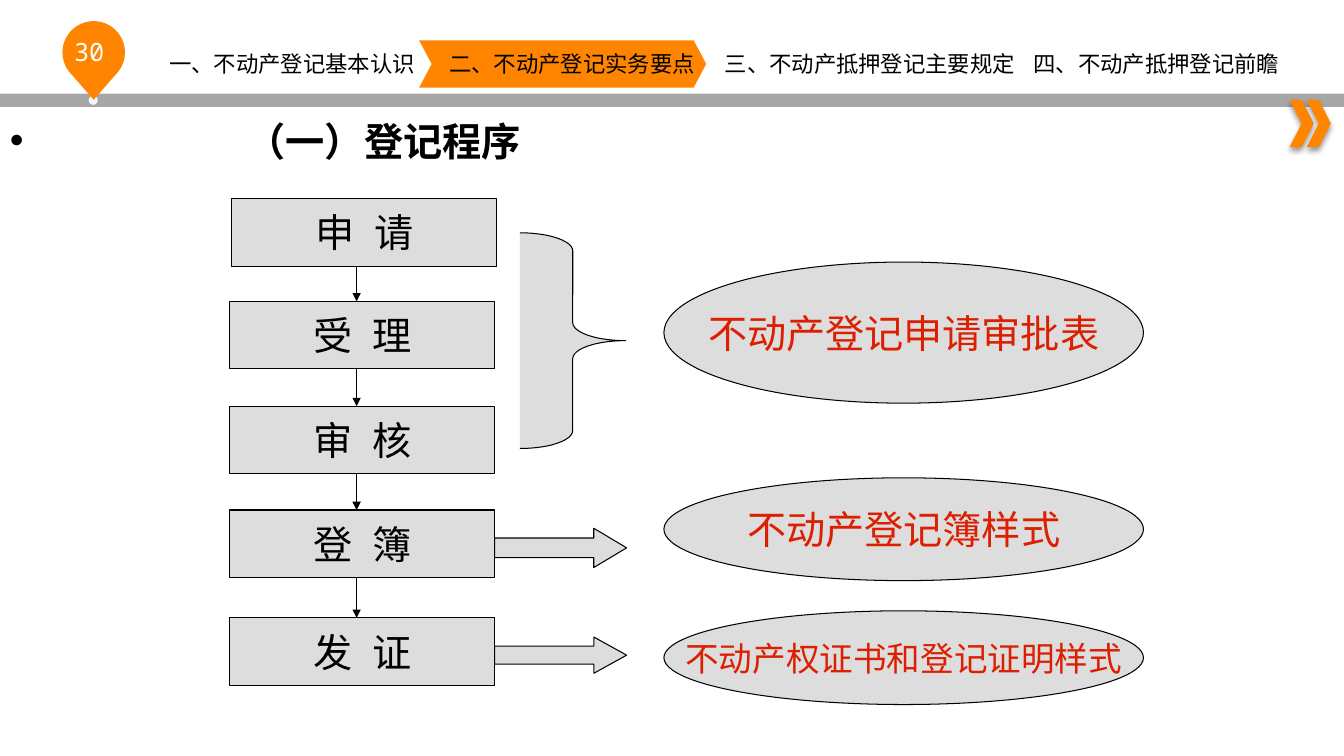
import math
from dataclasses import dataclass

from lxml import etree
from pptx import Presentation
from pptx.dml.color import RGBColor
from pptx.enum.shapes import MSO_CONNECTOR, MSO_SHAPE
from pptx.enum.text import MSO_ANCHOR, PP_ALIGN
from pptx.oxml.ns import qn
from pptx.util import Pt

PX = 9144  # EMU per px, 100 px to the inch
RECT, OVAL = MSO_SHAPE.RECTANGLE, MSO_SHAPE.OVAL
CHEVRON, ARROW = MSO_SHAPE.CHEVRON, MSO_SHAPE.RIGHT_ARROW
BRACE = MSO_SHAPE.RIGHT_BRACE
STRAIGHT = MSO_CONNECTOR.STRAIGHT
LEFT, CENTER = PP_ALIGN.LEFT, PP_ALIGN.CENTER
TOP, MIDDLE = MSO_ANCHOR.TOP, MSO_ANCHOR.MIDDLE


@dataclass(frozen=True)
class Theme:
    orange: str = "FF8500"
    bar: str = "A6A6A6"
    dot: str = "F6F6F6"
    panel: str = "DDDDDD"
    ink: str = "000000"
    white: str = "FFFFFF"
    red: str = "DC1F00"
    chinese: str = "Noto Sans CJK SC"
    mono: str = "Noto Sans Mono"
    nav_font: str = "Calibri"
    box_font: str = "Arial"
    nav_size: int = 16
    number_size: int = 18
    small_size: int = 24
    large_size: int = 28


THEME = Theme()

NAV_ITEMS = [
    ("一、不动产登记基本认识", 159, 262, CENTER, THEME.nav_font),
    ("二、不动产登记实务要点", 446, 255, LEFT, THEME.chinese),
    ("三、不动产抵押登记主要规定", 701, 325, CENTER, THEME.nav_font),
    ("四、不动产抵押登记前瞻", 1026, 259, LEFT, THEME.chinese),
]
STEP_WIDTH, STEP_HEIGHT = 263, 67
STEPS = [("申 请", 230, 197), ("受 理", 228, 299), ("审 核", 228, 403),
         ("登 簿", 228, 506), ("发 证", 228, 613)]
FORMS = [
    ("不动产登记申请审批表", 260, 140, THEME.large_size),
    ("不动产登记簿样式", 474, 102, THEME.large_size),
    ("不动产权证书和登记证明样式", 606, 93, THEME.small_size),
]
OUTPUT_ARROWS = [(524, 39, 0.836), (632, 36, 0.904)]


def emu(*lengths):
    return [length * PX for length in lengths]


def paint(shape, fill, line=None):
    shape.shadow.inherit = False
    shape.fill.solid()
    shape.fill.fore_color.rgb = RGBColor.from_string(fill)
    if line:
        shape.line.color.rgb = RGBColor.from_string(line)
        shape.line.width = Pt(0.75)
    else:
        shape.line.fill.background()


def add_preset(slide, kind, at, fill, line=None, adjust=()):
    shape = slide.shapes.add_shape(kind, *emu(*at))
    paint(shape, fill, line)
    for index, value in enumerate(adjust):
        shape.adjustments[index] = value
    return shape


def write(box, text, size, color, font, align=CENTER, anchor=MIDDLE,
          wrap=False, inset=None, bold=False, spacing=0):
    """Put one formatted line in box; spacing is letter spacing in points."""
    frame = box.text_frame
    layout = {"word_wrap": wrap, "vertical_anchor": anchor}
    if inset is not None:
        for side in ("left", "top", "right", "bottom"):
            layout["margin_" + side] = inset * PX
    for name, value in layout.items():
        setattr(frame, name, value)
    para = frame.paragraphs[0]
    para.alignment = align
    span = para.add_run()
    span.text = text
    for name, value in {"size": Pt(size), "name": font, "bold": bold}.items():
        setattr(span.font, name, value)
    span.font.color.rgb = RGBColor.from_string(color)
    properties = span.font._element
    etree.SubElement(properties, qn("a:ea"), typeface=THEME.chinese)
    if spacing:
        properties.set("spc", str(spacing * 100))
    return para


def add_text(slide, at, *args, **options):
    return write(slide.shapes.add_textbox(*emu(*at)), *args, **options)


def add_drop_shadow(shape):
    effects = shape._element.spPr.find(qn("a:effectLst"))
    shadow = etree.SubElement(effects, qn("a:outerShdw"), blurRad=str(Pt(4)),
                              dist=str(Pt(3)), dir="5400000", rotWithShape="0")
    color = etree.SubElement(shadow, qn("a:srgbClr"), val=THEME.ink)
    etree.SubElement(color, qn("a:alpha"), val="40000")


def add_pin(slide, center_x, center_y, radius, tip_y):
    """Draw a round map pin that narrows to a tip below its centre."""
    points = []
    for degrees in range(135, 406, 5):
        angle = math.radians(degrees)
        points.append((round((center_x + radius * math.cos(angle)) * PX),
                       round((center_y + radius * math.sin(angle)) * PX)))
    builder = slide.shapes.build_freeform(*emu(center_x, tip_y))
    builder.add_line_segments(points, close=True)
    paint(builder.convert_to_shape(), THEME.orange)


def add_flow_line(slide, x, start_y, end_y):
    line = slide.shapes.add_connector(STRAIGHT, *emu(x, start_y, x, end_y))
    line.line.color.rgb = RGBColor.from_string(THEME.ink)
    line.line.width = Pt(0.75)
    etree.SubElement(line.line._get_or_add_ln(), qn("a:tailEnd"), type="triangle")
    etree.SubElement(line._element.spPr, qn("a:effectLst"))


def add_header(slide):
    add_preset(slide, RECT, (0, 93, 1334, 13), THEME.bar)
    for left in (1280, 1297):
        add_drop_shadow(add_preset(slide, CHEVRON, (left, 99, 24, 47), THEME.orange))
    add_preset(slide, OVAL, (88, 95, 9, 9), THEME.dot)
    add_pin(slide, 93, 52, 31, 99)
    add_text(slide, (45, 31, 87, 40), "30", THEME.number_size, THEME.white,
             THEME.mono, anchor=TOP, wrap=True)
    add_preset(slide, CHEVRON, (416, 40, 285, 47), THEME.orange, adjust=[0.267])
    for text, left, width, align, font in NAV_ITEMS:
        add_text(slide, (left, 50, width, 27), text, THEME.nav_size, THEME.ink,
                 font, align=align, wrap=True, inset=0)


def add_title(slide):
    para = add_text(slide, (0, 120, 934, 560), "（一）登记程序", THEME.large_size,
                    THEME.ink, THEME.chinese, align=LEFT, anchor=TOP,
                    wrap=True, bold=True)
    para.line_spacing = 0.8
    properties = para._p.get_or_add_pPr()
    indent = 235 * PX
    properties.set("marL", str(indent))
    properties.set("indent", str(-indent))
    etree.SubElement(properties, qn("a:buFont"), typeface=THEME.box_font)
    etree.SubElement(properties, qn("a:buChar"), char="•")


def add_steps(slide):
    for text, left, top in STEPS:
        box = add_preset(slide, RECT, (left, top, STEP_WIDTH, STEP_HEIGHT),
                         THEME.panel, THEME.ink)
        write(box, text, THEME.large_size, THEME.ink, THEME.box_font, spacing=4)
    for (_, _, top), (_, _, next_top) in zip(STEPS, STEPS[1:]):
        add_flow_line(slide, 354, top + STEP_HEIGHT, next_top)


def add_forms(slide):
    add_preset(slide, BRACE, (516, 231, 105, 214), THEME.panel, THEME.ink, [0.17, 0.5])
    for top, height, head in OUTPUT_ARROWS:
        add_preset(slide, ARROW, (491, top, 131, height), THEME.panel, THEME.ink,
                   [0.5, head])
    for text, top, height, size in FORMS:
        oval = add_preset(slide, OVAL, (659, top, 476, height), THEME.panel, THEME.ink)
        write(oval, text, size, THEME.red, THEME.box_font)


def main():
    deck = Presentation()
    deck.slide_width, deck.slide_height = emu(1334, 750)
    page = deck.slides.add_slide(deck.slide_layouts[6])
    add_header(page)
    add_title(page)
    add_steps(page)
    add_forms(page)
    deck.save("out.pptx")


if __name__ == "__main__":
    main()
